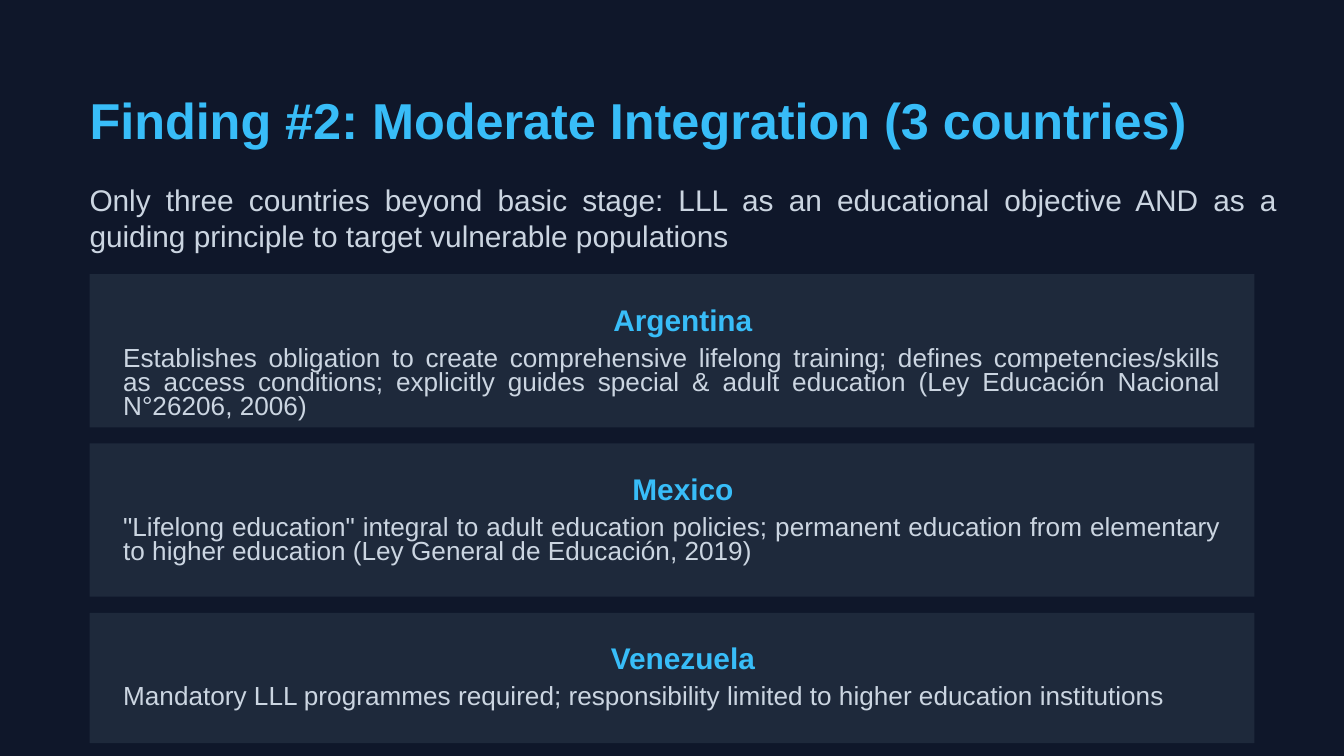
from pptx import Presentation
from pptx.dml.color import RGBColor
from pptx.enum.shapes import MSO_SHAPE
from pptx.enum.text import PP_ALIGN
from pptx.util import Inches, Pt

RECTANGLE = MSO_SHAPE.RECTANGLE
LEFT, CENTER, JUSTIFY = PP_ALIGN.LEFT, PP_ALIGN.CENTER, PP_ALIGN.JUSTIFY

# Content
TITLE = "Finding #2: Moderate Integration (3 countries)"
INTRO = ("Only three countries beyond basic stage: LLL as an educational objective "
         "AND as a guiding principle to target vulnerable populations")
COUNTRIES = [
    ("Argentina", "Establishes obligation to create comprehensive lifelong training; "
     "defines competencies/skills as access conditions; explicitly guides special & "
     "adult education (Ley Educación Nacional N°26206, 2006)", 2),
    ("Mexico", "\"Lifelong education\" integral to adult education policies; permanent "
     "education from elementary to higher education (Ley General de Educación, 2019)", 2),
    ("Venezuela", "Mandatory LLL programmes required; responsibility limited to "
     "higher education institutions", 1),
]

# Style
FONT = "Arial"
NAVY, SLATE, SKY, PALE = "0F172A", "1E293B", "38BDF8", "CBD5E1"

# Layout in inches, on a 16:9 slide
WIDTH = 10
HEIGHT = WIDTH * 9 / 16
MARGIN = WIDTH / 15
HEADER_WIDTH = 8.84
CARD_WIDTH = WIDTH - 2 * MARGIN
CARD_TOP, CARD_PITCH, CARD_GAP = 2.04, 1.26, 0.12
LINE_HEIGHT = 0.17
PADDING = 0.25
HEADING_WIDTH, BODY_WIDTH = 8.33, 8.17


def color(value):
    return RGBColor.from_string(value)


def add_text(page, text, left, top, width, height, *, size, ink,
             bold=False, align=LEFT, spacing=None):
    box = page.shapes.add_textbox(Inches(left), Inches(top), Inches(width), Inches(height))
    frame = box.text_frame
    frame.word_wrap = True
    frame.margin_left = frame.margin_top = frame.margin_right = frame.margin_bottom = 0
    para = frame.paragraphs[0]
    para.alignment = align
    para.line_spacing = spacing
    span = para.add_run()
    span.text = text
    span.font.name, span.font.size, span.font.bold = FONT, Pt(size), bold
    span.font.color.rgb = color(ink)


def add_card(page, top, height):
    card = page.shapes.add_shape(RECTANGLE, Inches(MARGIN), Inches(top),
                                 Inches(CARD_WIDTH), Inches(height))
    card.shadow.inherit = False
    card.fill.solid()
    card.fill.fore_color.rgb = color(SLATE)
    card.line.fill.background()


deck = Presentation()
deck.slide_width, deck.slide_height = Inches(WIDTH), Inches(HEIGHT)
page = deck.slides.add_slide(deck.slide_layouts[6])
page.background.fill.solid()
page.background.fill.fore_color.rgb = color(NAVY)

# Title and introduction
add_text(page, TITLE, MARGIN, MARGIN, HEADER_WIDTH, 0.44,
         size=27, ink=SKY, bold=True, spacing=Pt(32.4))
add_text(page, INTRO, MARGIN, 1.35, HEADER_WIDTH, 0.33,
         size=16, ink=PALE, align=JUSTIFY)

# One card per country; a one-line body makes its card a line shorter
for row, (country, finding, lines) in enumerate(COUNTRIES):
    top = CARD_TOP + row * CARD_PITCH
    add_card(page, top, CARD_PITCH - CARD_GAP - (2 - lines) * LINE_HEIGHT)
    add_text(page, country, MARGIN + PADDING, top + PADDING, HEADING_WIDTH, 0.22,
             size=16, ink=SKY, bold=True, align=CENTER, spacing=Pt(15.8))
    add_text(page, finding, MARGIN + PADDING, top + 0.55,
             BODY_WIDTH if lines > 1 else HEADING_WIDTH, lines * LINE_HEIGHT,
             size=14, ink=PALE, align=JUSTIFY, spacing=Pt(13))

deck.save("out.pptx")
